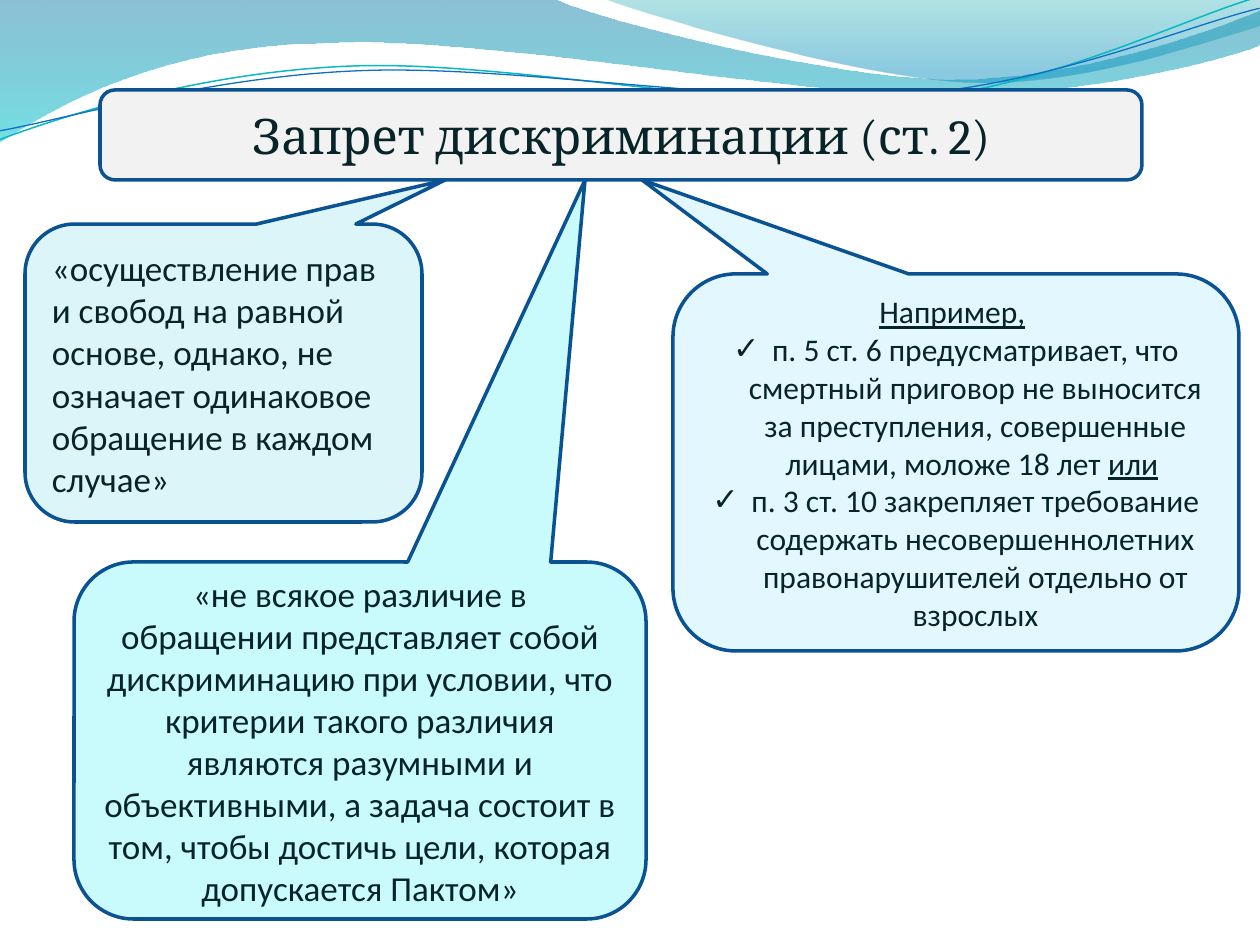
from dataclasses import dataclass
from typing import NamedTuple

from lxml import etree
from pptx import Presentation
from pptx import util as u
from pptx.dml.color import RGBColor
from pptx.enum import shapes, text
from pptx.oxml.ns import qn

PX = 914400 / 126  # EMU in one px
INDENT = 39
TILT = -2.7
COLORS = {
    "text": "072428", "border": "0B5292", "title": "F2F2F2",
    "equal": "DBF5F9", "criteria": "C9FAFC", "example": "E2F8FE",
    "deep": "0074A1", "aqua": "00C6CF", "teal": "00A1A9", "blue": "008BBF",
    "teal_line": "0AB8BF", "blue_line": "0F6FC6",
}
CENTER, LEFT = text.PP_ALIGN.CENTER, text.PP_ALIGN.LEFT


class Run(NamedTuple):
    text: str
    underline: bool = False


class Para(NamedTuple):
    runs: list
    bullet: bool = False


class Stop(NamedTuple):
    color: str
    position: float
    alpha: int


@dataclass
class Panel:
    box: tuple
    fill: str
    paras: list
    size: int = 20
    font: str = "Calibri"
    align: text.PP_ALIGN = CENTER
    tip_x: int = 0  # callouts only: where the pointer meets the title


@dataclass
class Wave:
    start: tuple
    segments: list  # two numbers: straight; six: cubic curve
    stops: tuple = ()
    line: str = ""
    width: float = 0


WAVES = [
    Wave((0, 0), [(554, -1), (600, 21, 837, 79, 955, 79),
                  (1075, 79, 1207, 33, 1260, 11), (1261, 45),
                  (1239, 55, 1096, 96, 940, 95), (784, 95, 481, 35, 324, 43),
                  (163, 45, 58, 105, -1, 142), (0, 0)],
         stops=(Stop("deep", 0, 45), Stop("aqua", 1, 55))),
    Wave((604, -1), [(641, 14, 859, 78, 969, 82),
                     (1079, 87, 1211, 40, 1260, 26), (1260, 0), (604, -1)],
         stops=(Stop("teal", 0, 30), Stop("blue", 0.8, 45))),
    Wave((-3, 110), [(59, 90, 199, 52, 349, 53), (498, 53, 745, 117, 896, 114),
                     (1048, 108, 1184, 45, 1260, 27)],
         line="teal_line", width=0.85),
    Wave((-2, 101), [(57, 94, 207, 57, 357, 58), (508, 58, 750, 112, 902, 108),
                     (1052, 104, 1188, 52, 1262, 38)],
         line="blue_line", width=0.75),
]

TITLE = Panel((100, 90, 1042, 90), "title",
              [Para([Run("Запрет дискриминации (ст. 2)")])], 28, "Cambria")
TIP_Y = TITLE.box[1] + TITLE.box[3]
EQUAL = Panel((25, 224, 397, 298), "equal", [Para([Run(
    "«осуществление прав и свобод на равной основе, однако, не означает "
    "одинаковое обращение в каждом случае»")])], align=LEFT, tip_x=445)
CRITERIA = Panel((74, 562, 572, 357), "criteria", [Para([Run(
    "«не всякое различие в обращении представляет собой дискриминацию при "
    "условии, что критерии такого различия являются разумными и "
    "объективными, а задача состоит в том, чтобы достичь цели, которая "
    "допускается Пактом»")])], tip_x=585)
EXAMPLE = Panel((673, 274, 566, 377), "example", [
    Para([Run("Например,", True), Run(" ")]),
    Para([Run("п. 5 ст. 6 предусматривает, что смертный приговор не "
              "выносится за преступления, совершенные лицами, моложе "
              "18 лет "), Run("или", True), Run(" ")], bullet=True),
    Para([Run("п. 3 ст. 10 закрепляет требование содержать "
              "несовершеннолетних правонарушителей отдельно от "
              "взрослых")], bullet=True),
], size=18, tip_x=642)


def emu(px: float) -> u.Emu:
    return u.Emu(round(px * PX))


def rgb(name: str) -> RGBColor:
    return RGBColor.from_string(COLORS[name])


def bend(sp, segments: list) -> None:
    """Join the straight steps of each six-number segment into one curve."""
    steps = iter(list(sp.element.spPr.iter(qn("a:lnTo"))))
    for seg in segments:
        first = next(steps)
        if len(seg) == 2:
            continue
        curve = etree.Element(qn("a:cubicBezTo"))
        first.addprevious(curve)
        for step in (first, next(steps), next(steps)):
            curve.append(step[0])
            step.getparent().remove(step)


def draw_wave(s, wave: Wave) -> None:
    points = [(emu(seg[i]), emu(seg[i + 1]))
              for seg in wave.segments for i in range(0, len(seg), 2)]
    builder = s.shapes.build_freeform(*map(emu, wave.start), scale=1.0)
    builder.add_line_segments(points, close=bool(wave.stops))
    sp = builder.convert_to_shape()
    bend(sp, wave.segments)
    sp.shadow.inherit = False
    if not wave.stops:
        sp.rotation = TILT
        sp.fill.background()
        sp.line.color.rgb = rgb(wave.line)
        sp.line.width = u.Pt(wave.width)
        return
    sp.line.fill.background()
    sp.fill.gradient()
    sp.fill.gradient_angle = 270
    for stop, want in zip(sp.fill.gradient_stops, wave.stops):
        stop.color.rgb = rgb(want.color)
        stop.position = want.position
    for clr, want in zip(sp.element.spPr.iter(qn("a:srgbClr")), wave.stops):
        etree.SubElement(clr, qn("a:alpha"), val=str(want.alpha * 1000))


def add_bullet(p) -> None:
    pPr = p._p.get_or_add_pPr()
    pPr.set("marL", str(emu(INDENT)))
    pPr.set("indent", str(-emu(INDENT)))
    etree.SubElement(pPr, qn("a:buFont"), typeface="Calibri")
    etree.SubElement(pPr, qn("a:buChar"), char="✓")


def draw_panel(s, panel: Panel) -> None:
    kind = (shapes.MSO_SHAPE.ROUNDED_RECTANGULAR_CALLOUT if panel.tip_x
            else shapes.MSO_SHAPE.ROUNDED_RECTANGLE)
    sp = s.shapes.add_shape(kind, *map(emu, panel.box))
    if panel.tip_x:
        x, y, w, h = panel.box
        sp.adjustments[0] = (panel.tip_x - x) / w - 0.5
        sp.adjustments[1] = (TIP_Y - y) / h - 0.5
    sp.shadow.inherit = False
    sp.fill.solid()
    sp.fill.fore_color.rgb = rgb(panel.fill)
    sp.line.color.rgb = rgb("border")
    sp.line.width = u.Pt(2)
    tf = sp.text_frame
    tf.word_wrap = True
    tf.vertical_anchor = text.MSO_ANCHOR.MIDDLE
    for i, para in enumerate(panel.paras):
        p = tf.add_paragraph() if i else tf.paragraphs[0]
        p.alignment = panel.align
        if para.bullet:
            add_bullet(p)
        for run in para.runs:
            r = p.add_run()
            r.text = run.text
            r.font.name = panel.font
            r.font.size = u.Pt(panel.size)
            r.font.color.rgb = rgb("text")
            if run.underline:
                r.font.underline = True


def main() -> None:
    prs = Presentation()
    prs.slide_width, prs.slide_height = emu(1260), emu(945)
    s = prs.slides.add_slide(prs.slide_layouts[6])

    # Wavy header
    for wave in WAVES:
        draw_wave(s, wave)

    # Title and callouts, back to front
    for panel in (EQUAL, TITLE, CRITERIA, EXAMPLE):
        draw_panel(s, panel)

    prs.save("out.pptx")


if __name__ == "__main__":
    main()
